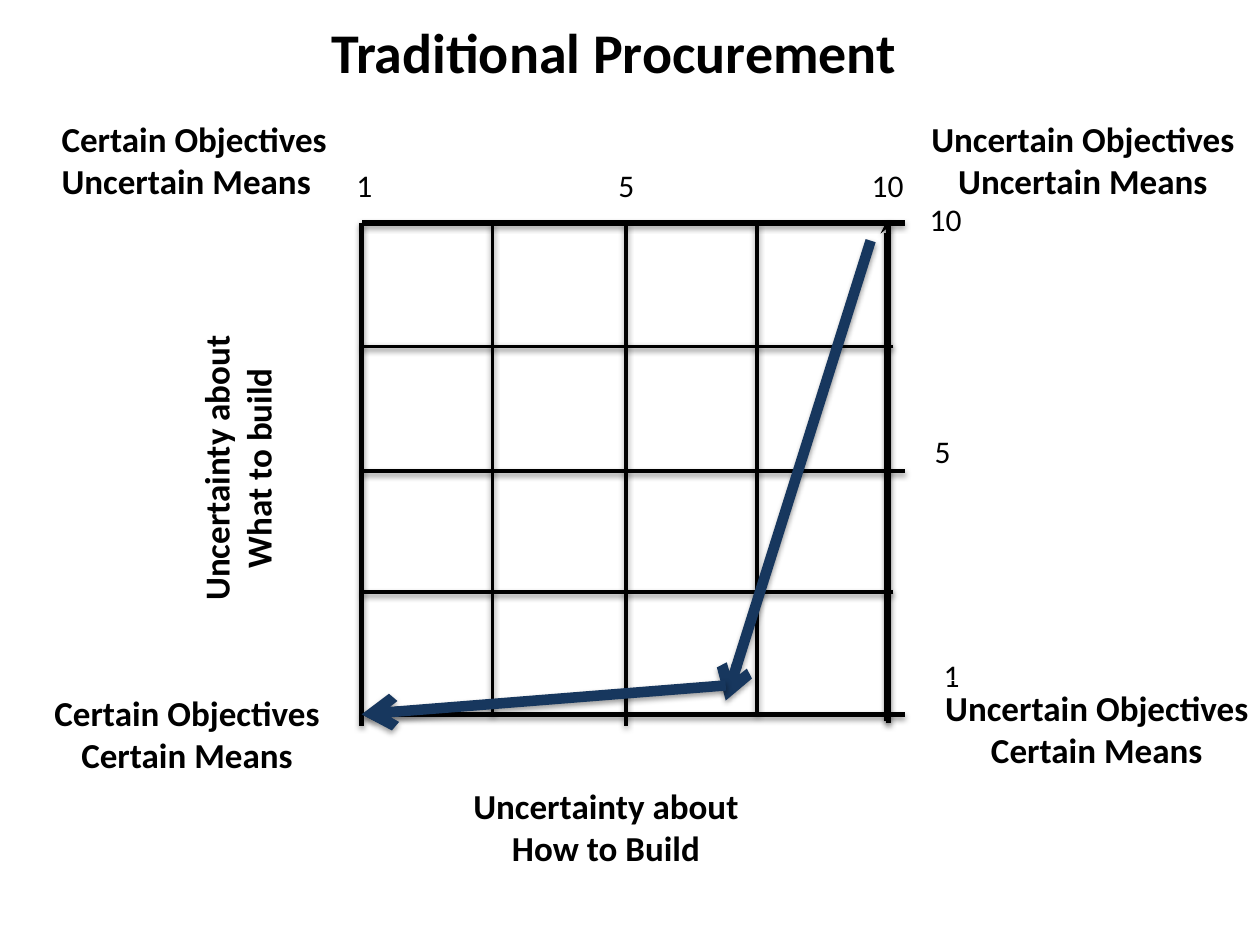
from dataclasses import dataclass

from lxml import etree
from pptx import Presentation
from pptx.dml.color import RGBColor
from pptx.enum.shapes import MSO_CONNECTOR, MSO_SHAPE
from pptx.enum.text import MSO_ANCHOR, MSO_AUTO_SIZE, PP_ALIGN
from pptx.oxml import parse_xml
from pptx.oxml.ns import nsdecls, qn
from pptx.util import Inches, Pt


@dataclass(frozen=True)
class Theme:
    font: str = "Calibri"
    black: RGBColor = RGBColor(0, 0, 0)
    white: RGBColor = RGBColor(255, 255, 255)
    navy: RGBColor = RGBColor(0x17, 0x37, 0x5E)
    title: int = 32
    label: int = 20
    tick: int = 18


theme = Theme()
LEFT, CENTER = PP_ALIGN.LEFT, PP_ALIGN.CENTER
TOP, MIDDLE = MSO_ANCHOR.TOP, MSO_ANCHOR.MIDDLE
SHADOW = (
    f'<a:effectLst {nsdecls("a")}>'
    '<a:outerShdw blurRad="40000" dist="20000" dir="5400000" rotWithShape="0">'
    '<a:srgbClr val="000000"><a:alpha val="38000"/></a:srgbClr>'
    '</a:outerShdw></a:effectLst>'
)

presentation = Presentation()
presentation.slide_width, presentation.slide_height = Inches(10), Inches(7.5)
slide = presentation.slides.add_slide(presentation.slide_layouts[6])


def add_line(start, end, width, color=theme.black, head=None):
    points = [Inches(value) for value in (*start, *end)]
    line = slide.shapes.add_connector(MSO_CONNECTOR.STRAIGHT, *points)
    line.line.width = Pt(width)
    line.line.color.rgb = color
    if head:
        etree.SubElement(line.line._get_or_add_ln(), qn("a:tailEnd"), type=head)
    line._element.spPr.append(parse_xml(SHADOW))


def add_text(box, lines, size, bold=True, align=CENTER, anchor=TOP, wrap=False, outlined=False):
    place = [Inches(value) for value in box]
    if outlined:
        shape = slide.shapes.add_shape(MSO_SHAPE.RECTANGLE, *place)
        shape.shadow.inherit = False
        shape.fill.background()
        shape.line.color.rgb = theme.white
        shape.line.width = Pt(0.75)
    else:
        shape = slide.shapes.add_textbox(*place)
    frame = shape.text_frame
    frame.word_wrap = wrap
    frame.auto_size = MSO_AUTO_SIZE.SHAPE_TO_FIT_TEXT
    frame.vertical_anchor = anchor
    for index, line in enumerate(lines):
        paragraph = frame.add_paragraph() if index else frame.paragraphs[0]
        paragraph.alignment = align
        run = paragraph.add_run()
        run.text = line
        run.font.name = theme.font
        run.font.size = Pt(size)
        run.font.bold = bold
        run.font.color.rgb = theme.black
    return shape


# Grid: horizontal lines as (y, right end, width, head)
grid_left, grid_top, grid_bottom = 2.87, 1.77, 5.67
for y, right, width, head in [
    (4.7, 7.09, 2.25, None), (grid_top, 7.18, 3, None), (2.75, 7.09, 2.25, None),
    (3.74, 7.18, 2.25, None), (grid_bottom, 7.18, 3, "stealth"),
]:
    add_line((right, y), (grid_left, y), width, head=head)

# Grid: vertical lines as (x, bottom end, top end, width, head)
for x, bottom, top, width, head in [
    (7.03, 5.72, grid_top, 2, "stealth"), (grid_left, 5.76, grid_top, 3, None),
    (4.97, 5.76, grid_top, 2, None), (7.05, 5.74, 1.75, 3, None),
    (6.01, grid_bottom, grid_top, 2, None), (3.91, grid_bottom, grid_top, 2, None),
]:
    add_line((x, bottom), (x, top), width, head=head)

# Scale numbers along the top and the right side
for number, x, y, width, wrap in [
    ("1", 2.73, 1.27, 0.33, False), ("5", 4.81, 1.27, 0.33, False),
    ("10", 6.82, 1.27, 0.46, False), ("10", 7.28, 1.54, 0.48, True),
    ("5", 7.32, 3.38, 0.33, True), ("1", 7.39, 5.16, 0.33, False),
]:
    add_text((x, y, width, 0.4), [number], theme.tick, bold=False, align=LEFT, wrap=wrap)

# Title
add_text((2.53, 0.09, 4.78, 0.64), ["Traditional Procurement"], theme.title, align=LEFT)

# Corner labels
for x, y, width, objectives, means, align, anchor, outlined in [
    (0.39, 0.88, 2.33, "Certain", "Uncertain", LEFT, MIDDLE, False),
    (7.28, 0.88, 2.63, "Uncertain", "Uncertain", CENTER, TOP, False),
    (0.32, 5.44, 2.33, "Certain", "Certain", CENTER, MIDDLE, False),
    (7.39, 5.4, 2.63, "Uncertain", "Certain", CENTER, TOP, True),
]:
    add_text((x, y, width, 0.77), [f"{objectives} Objectives", f"{means} Means"],
             theme.label, align=align, anchor=anchor, outlined=outlined)

# Axis titles
what_axis = add_text((0.44, 3.33, 2.88, 0.77), ["Uncertainty about What to build"],
                     theme.label, wrap=True)
what_axis.rotation = 270
add_text((3.41, 6.18, 2.8, 0.77), ["Uncertainty about How to Build"],
         theme.label, wrap=True, outlined=True)

# Procurement route from uncertain to certain
for start, end in [((6.91, 1.91), (5.76, 5.56)), ((5.76, 5.44), (grid_left, grid_bottom))]:
    add_line(start, end, 6, theme.navy, "arrow")

presentation.save("out.pptx")
